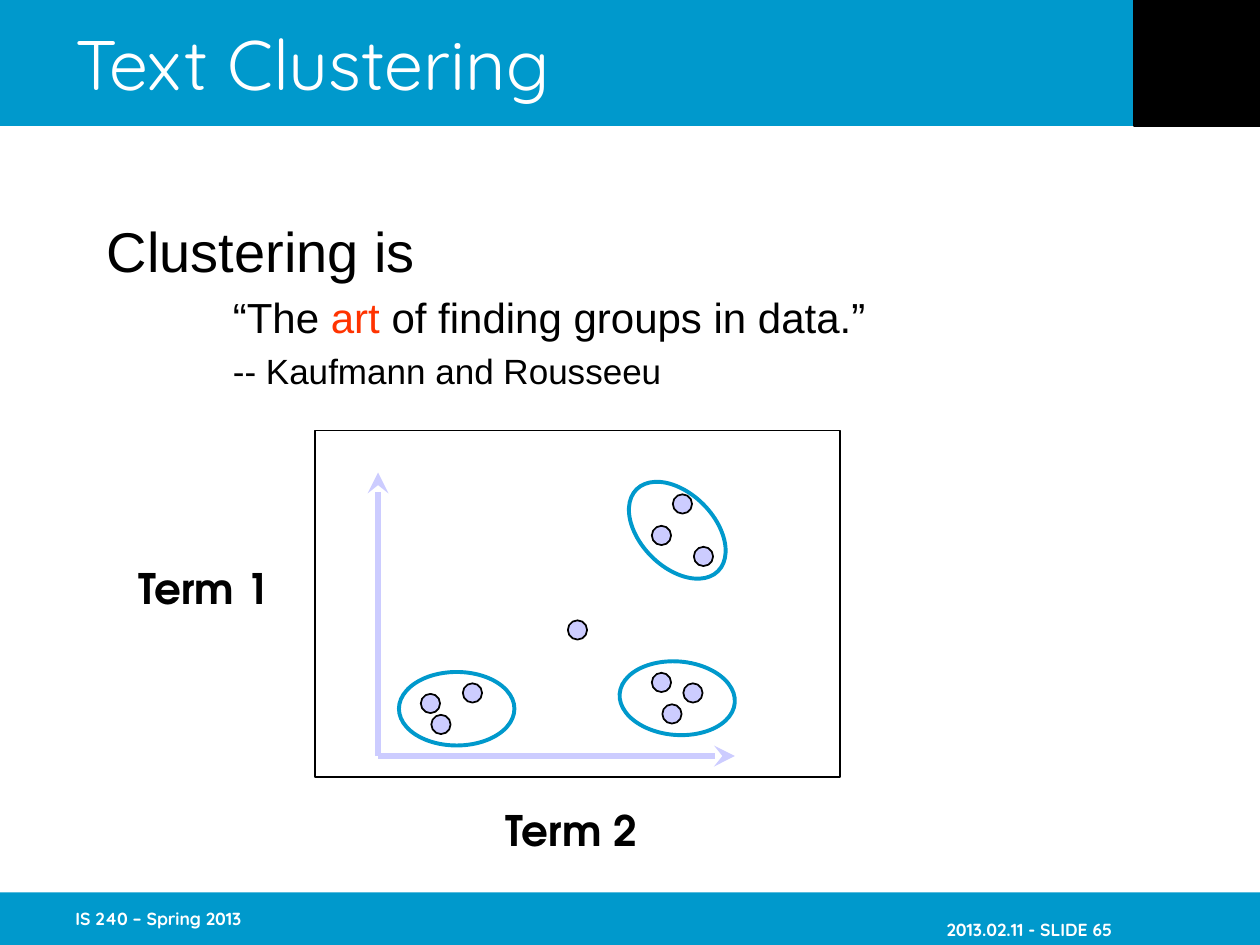
from pptx import Presentation
from pptx.dml.color import RGBColor
from pptx.enum.shapes import MSO_CONNECTOR, MSO_SHAPE
from pptx.enum.text import MSO_ANCHOR, PP_ALIGN
from pptx.oxml.ns import qn
from pptx.util import Pt
from lxml.etree import SubElement

COLORS = {"blue": "0099CC", "black": "000000", "white": "FFFFFF",
          "lilac": "CCCCFF", "red": "FF3300"}

prs = Presentation()
prs.slide_width, prs.slide_height = Pt(720), Pt(540)
slide = prs.slides.add_slide(prs.slide_layouts[6])


def add_figure(preset, box, fill=None, line=None, weight=1, rotation=0):
    figure = slide.shapes.add_shape(preset, *map(Pt, box))
    figure.shadow.inherit = False
    figure.rotation = rotation
    if fill:
        figure.fill.solid()
        figure.fill.fore_color.rgb = RGBColor.from_string(COLORS[fill])
    else:
        figure.fill.background()
    if line:
        figure.line.color.rgb = RGBColor.from_string(COLORS[line])
        figure.line.width = Pt(weight)
    else:
        figure.line.fill.background()


def add_text(box, paragraphs, frame_format):
    """Each paragraph is a pair: its format and its runs of (text, font, color)."""
    frame = slide.shapes.add_textbox(*map(Pt, box)).text_frame
    for key, value in {"word_wrap": True, **frame_format}.items():
        setattr(frame, key, value)
    for i, (paragraph_format, runs) in enumerate(paragraphs):
        paragraph = frame.add_paragraph() if i else frame.paragraphs[0]
        for key, value in paragraph_format.items():
            setattr(paragraph, key, value)
        for text, font, color in runs:
            run = paragraph.add_run()
            run.text = text
            run.font.color.rgb = RGBColor.from_string(COLORS[color])
            for key, value in font.items():
                setattr(run.font, key, value)


# Header and footer bands
add_figure(MSO_SHAPE.RECTANGLE, (0, 0, 720, 72), "blue")
add_figure(MSO_SHAPE.RECTANGLE, (0, 510, 720, 30), "blue")
add_figure(MSO_SHAPE.RECTANGLE, (648, 0, 72, 72), "black", "black", 0.75)

# Footer texts
footer_font = {"name": "Quicksand", "size": Pt(10), "bold": True}
footer_frame = {"vertical_anchor": MSO_ANCHOR.MIDDLE, "margin_right": 0}
for box, text, align in [
    ((36, 510, 150, 30), "IS 240 – Spring 2013", PP_ALIGN.LEFT),
    ((486, 516.25, 149.5, 30), "2013.02.11 - SLIDE 65", PP_ALIGN.RIGHT),
]:
    add_text(box, [({"alignment": align}, [(text, footer_font, "white")])], footer_frame)

# Title
title_font = {"name": "Quicksand", "size": Pt(40)}
add_text((36, 0, 612, 72), [({}, [("Text Clustering", title_font, "white")])],
         {"vertical_anchor": MSO_ANCHOR.MIDDLE})

# Plot frame and axis labels
add_figure(MSO_SHAPE.RECTANGLE, (180, 246, 300, 198), line="black")
label_font = {"name": "TeX Gyre Adventor", "size": Pt(24), "bold": True}
for box, text, wrap in [((72, 318, 96, 36), "Term 1", False),
                        ((282, 456, 114, 36), "Term 2", True)]:
    add_text(box, [({}, [(text, label_font, "black")])], {"word_wrap": wrap})

# Axes, from the shared origin to each arrow tip
origin = (216, 432)
for tip in [(216, 270), (420, 432)]:
    axis = slide.shapes.add_connector(MSO_CONNECTOR.STRAIGHT, *map(Pt, origin + tip))
    axis.line.color.rgb = RGBColor.from_string(COLORS["lilac"])
    axis.line.width = Pt(4)
    SubElement(axis.line._get_or_add_ln(), qn("a:tailEnd"), type="stealth")
    SubElement(axis._element.spPr, qn("a:effectLst"))

# Data points, given by their centres
diameter = 11
for x, y in [(330, 360), (390, 288), (384, 408), (378, 390), (396, 396),
             (252, 414), (402, 318), (378, 306), (246, 402), (270, 396)]:
    add_figure(MSO_SHAPE.OVAL, (x - diameter / 2, y - diameter / 2, diameter, diameter),
               "lilac", "black")

# Cluster outlines
for left, top, rotation in [(228, 384, 0), (354, 282, 45.1), (354, 378, 4.5)]:
    add_figure(MSO_SHAPE.OVAL, (left, top, 66, 42), line="blue", weight=2.25,
               rotation=rotation)

# Definition
heading, quote, author = [{"name": "Arial", "size": Pt(size)} for size in (32, 24, 20)]
add_text((54, 120, 612, 324), [
    ({}, [("Clustering is", heading, "black")]),
    ({"level": 1, "space_before": Pt(4.8)},
     [("“The ", quote, "black"), ("art ", quote, "red"),
      ("of finding groups in data.”", quote, "black")]),
    ({"level": 1, "space_before": Pt(4)},
     [("-- Kaufmann and Rousseeu", author, "black")]),
], {})
definition = slide.shapes[-1].text_frame
for paragraph, (margin, indent) in zip(definition.paragraphs,
                                       [(27, -27), (90, -18), (90, -18)]):
    properties = paragraph._p.get_or_add_pPr()
    properties.set("marL", str(Pt(margin)))
    properties.set("indent", str(Pt(indent)))

prs.save("out.pptx")
